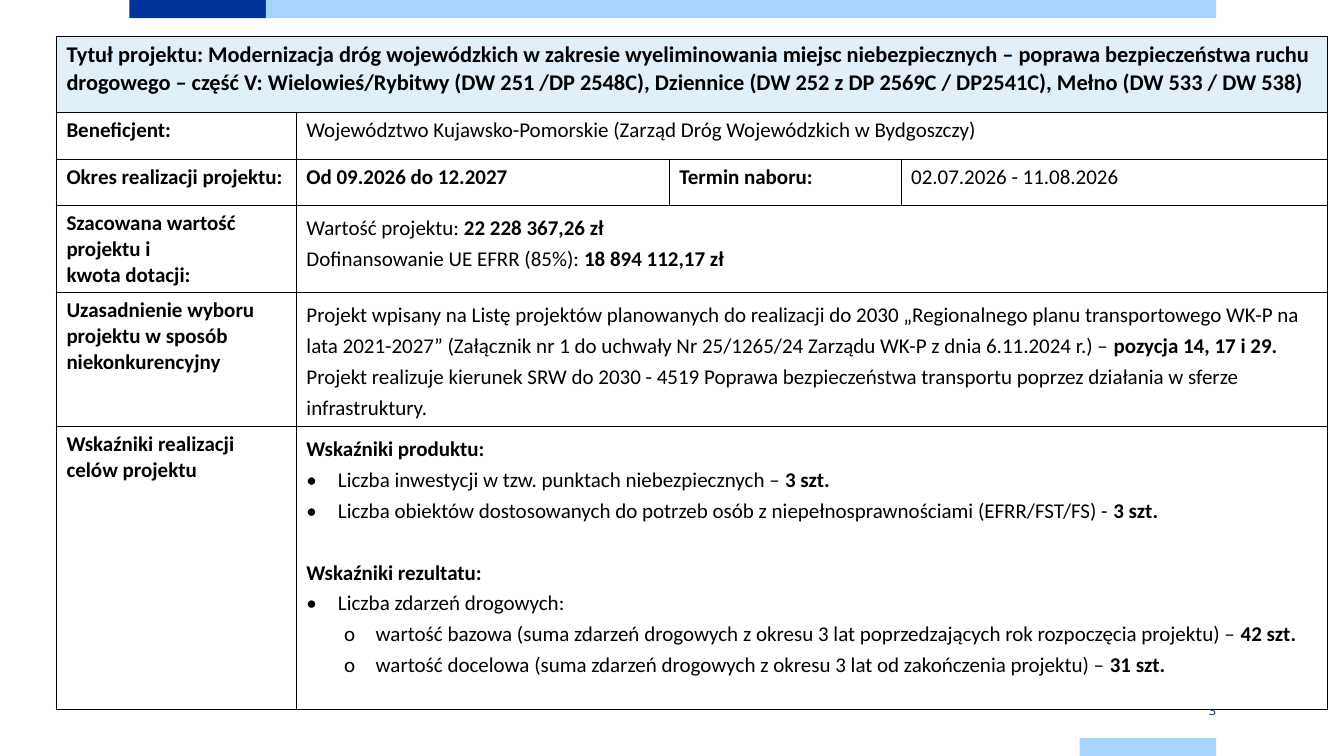
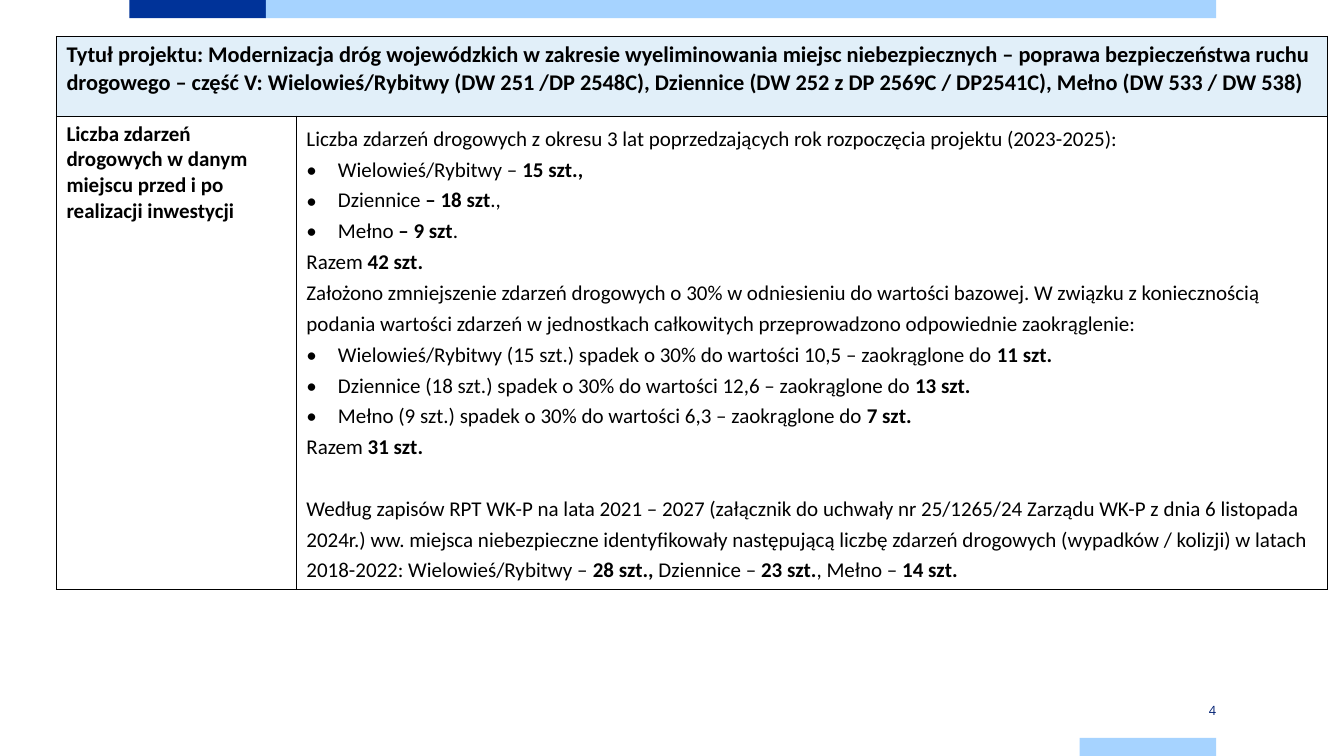
from pptx import Presentation
from pptx.dml.color import RGBColor
from pptx.enum.shapes import MSO_SHAPE
from pptx.enum.text import MSO_ANCHOR, PP_ALIGN
from pptx.oxml.ns import qn
from pptx.util import Pt
from lxml.etree import SubElement

# Shared look
NAVY, SKY, INK = "003399", "A6D3FF", "002073"
PALE, WHITE, BLACK = "E1EFF9", "FFFFFF", "000000"
FONT, SMALL = "Calibri", "Open Sans"
WIDE, HIGH = 960, 540
BAND = 13  # height of the bands
LEFT, TOP = 40.3, 26
STEP = 97.5  # width of the short bands
EDGE = 92.4  # left end of the top band
BACK = 771.2  # left end of the bottom band and number
LABEL = 171.4  # width of the label column

# Paragraph kinds: line spacing, space before, left indent, bullet
KINDS = {
    "plain": (1, 0, 0, None),
    "text": (1.2, 0, 0, None),
    "gap": (1.2, 22, 0, None),
    "dot": (1.2, 0, 22.5, "•"),
    "sub": (1.2, 0, 49.5, "o"),
}
HANG = 22.5

# Wording: ** switches bold on and off
TITLE = (
    "**Tytuł projektu: Modernizacja dróg wojewódzkich w zakresie wyeliminowania "
    "miejsc niebezpiecznych – poprawa bezpieczeństwa ruchu drogowego – część V: "
    "Wielowieś/Rybitwy (DW 251 /DP 2548C), Dziennice (DW 252 z DP 2569C / DP2541C), "
    "Mełno (DW 533 / DW 538)**"
)


def plain(*lines):
    return [("plain", line) for line in lines]


def bold(*lines):
    return plain(*(f"**{line}**" for line in lines))


FACTS = [
    [plain(TITLE)],
    [bold("Beneficjent:"),
     plain("Województwo Kujawsko-Pomorskie (Zarząd Dróg Wojewódzkich w Bydgoszczy)")],
    [bold("Okres realizacji projektu:"), bold("Od 09.2026 do 12.2027"),
     bold("Termin naboru:"), plain("02.07.2026 - 11.08.2026")],
    [bold("Szacowana wartość projektu i", "kwota dotacji:"), [
        ("text", "Wartość projektu: **22 228 367,26 zł**"),
        ("text", "Dofinansowanie UE EFRR (85%): **18 894 112,17 zł**"),
    ]],
    [bold("Uzasadnienie wyboru projektu w sposób niekonkurencyjny"), [
        ("text", "Projekt wpisany na Listę projektów planowanych do realizacji do 2030 "
         "„Regionalnego planu transportowego WK-P na lata 2021-2027” (Załącznik nr 1 do "
         "uchwały Nr 25/1265/24 Zarządu WK-P z dnia 6.11.2024 r.) – "
         "**pozycja 14, 17 i 29.**"),
        ("text", "Projekt realizuje kierunek SRW do 2030 - 4519 Poprawa bezpieczeństwa "
         "transportu poprzez działania w sferze infrastruktury."),
    ]],
    [bold("Wskaźniki realizacji celów projektu"), [
        ("text", "**Wskaźniki produktu:**"),
        ("dot", "Liczba inwestycji w tzw. punktach niebezpiecznych – **3 szt.**"),
        ("dot", "Liczba obiektów dostosowanych do potrzeb osób z niepełnosprawnościami "
         "(EFRR/FST/FS) - **3 szt.**"),
        ("gap", "**Wskaźniki rezultatu:**"),
        ("dot", "Liczba zdarzeń drogowych:"),
        ("sub", "wartość bazowa (suma zdarzeń drogowych z okresu 3 lat poprzedzających "
         "rok rozpoczęcia projektu) – **42 szt.**"),
        ("sub", "wartość docelowa (suma zdarzeń drogowych z okresu 3 lat od zakończenia "
         "projektu) – **31 szt.**"),
    ]],
]

EVENTS = [
    [plain(TITLE)],
    [bold("Liczba zdarzeń drogowych w danym miejscu przed i po realizacji inwestycji"), [
        ("text", "Liczba zdarzeń drogowych z okresu 3 lat poprzedzających rok "
         "rozpoczęcia projektu (2023-2025):"),
        ("dot", "Wielowieś/Rybitwy – **15 szt.,**"),
        ("dot", "Dziennice **– 18 szt**.,"),
        ("dot", "Mełno **– 9 szt**."),
        ("text", "Razem **42 szt.**"),
        ("text", "Założono zmniejszenie zdarzeń drogowych o 30% w odniesieniu do wartości "
         "bazowej. W związku z koniecznością podania wartości zdarzeń w jednostkach "
         "całkowitych przeprowadzono odpowiednie zaokrąglenie:"),
        ("dot", "Wielowieś/Rybitwy (15 szt.) spadek o 30% do wartości 10,5 – "
         "zaokrąglone do **11 szt.**"),
        ("dot", "Dziennice (18 szt.) spadek o 30% do wartości 12,6 – "
         "zaokrąglone do **13 szt.**"),
        ("dot", "Mełno (9 szt.) spadek o 30% do wartości 6,3 – zaokrąglone do **7 szt.**"),
        ("text", "Razem **31 szt.**"),
        ("gap", "Według zapisów RPT WK-P na lata 2021 – 2027 (załącznik do uchwały nr "
         "25/1265/24 Zarządu WK-P z dnia 6 listopada 2024r.) ww. miejsca niebezpieczne "
         "identyfikowały następującą liczbę zdarzeń drogowych (wypadków / kolizji) w "
         "latach 2018-2022: Wielowieś/Rybitwy – **28 szt., **Dziennice – **23 szt.**, "
         "Mełno – **14 szt.**"),
    ]],
]


def paint(part, color):
    """Give a fill or a font a solid colour."""
    if hasattr(part, "solid"):
        part.solid()
        part.fore_color.rgb = RGBColor.from_string(color)
    else:
        part.color.rgb = RGBColor.from_string(color)


# Bands and page number
def add_bands(slide, layout):
    """Draw the bands and hand them to the layout, which all slides share."""
    for mark in list(layout.placeholders):
        mark.element.getparent().remove(mark.element)
    right = BACK + STEP
    start = EDGE + STEP
    for left, top, width, color in (
        (EDGE, 0, STEP, NAVY),
        (start, 0, right - start, SKY),
        (BACK, HIGH - BAND, STEP, SKY),
    ):
        band = slide.shapes.add_shape(
            MSO_SHAPE.RECTANGLE, Pt(left), Pt(top), Pt(width), Pt(BAND))
        band.shadow.inherit = False
        paint(band.fill, color)
        band.line.fill.background()
        layout.shapes.element.append(band.element)


def add_number(slide, number):
    box = slide.shapes.add_textbox(Pt(BACK), Pt(501.2), Pt(STEP), Pt(BAND))
    frame = box.text_frame
    frame.word_wrap = True
    frame.vertical_anchor = MSO_ANCHOR.MIDDLE
    frame.margin_left = frame.margin_right = 0
    frame.margin_top = frame.margin_bottom = 0
    frame.text = str(number)
    line = frame.paragraphs[0]
    line.alignment = PP_ALIGN.RIGHT
    font = line.runs[0].font
    font.name, font.size = SMALL, Pt(9.1)
    paint(font, INK)


# Table parts
def add_edges(cell):
    props = cell._tc.get_or_add_tcPr()
    for spot, side in enumerate(("a:lnL", "a:lnR", "a:lnT", "a:lnB")):
        line = props.makeelement(qn(side), {"w": str(Pt(0.75))})
        solid = SubElement(line, qn("a:solidFill"))
        SubElement(solid, qn("a:srgbClr"), val=BLACK)
        props.insert(spot, line)


def write(line, kind, text, size):
    """Fill one paragraph, with its bullet and its bold parts."""
    space, before, indent, mark = KINDS[kind]
    if mark:
        props = line._p.get_or_add_pPr()
        props.set("marL", str(Pt(indent)))
        props.set("indent", str(-Pt(HANG)))
        SubElement(props, qn("a:buFont"), typeface=FONT)
        SubElement(props, qn("a:buChar"), char=mark)
    line.line_spacing = space
    if before:
        line.space_before = Pt(before)
    for spot, part in enumerate(text.split("**")):
        if part:
            run = line.add_run()
            run.text = part
            font = run.font
            font.name, font.size, font.bold = FONT, Pt(size), spot % 2 == 1
            paint(font, BLACK)


def fill_cell(cell, lines, size):
    frame = cell.text_frame
    for spot, (kind, text) in enumerate(lines):
        line = frame.add_paragraph() if spot else frame.paragraphs[0]
        write(line, kind, text, size)


def add_grid(slide, rows, widths, heights):
    """Build the table; the last cell of a short row spans what is left."""
    table = slide.shapes.add_table(
        len(rows), len(widths), Pt(LEFT), Pt(TOP),
        Pt(sum(widths)), Pt(sum(heights))).table
    table.first_row = table.horz_banding = False
    for col, width in zip(table.columns, widths):
        col.width = Pt(width)
    last = len(widths) - 1
    for index, (row, height) in enumerate(zip(rows, heights)):
        table.rows[index].height = Pt(height)
        for cell in table.rows[index].cells:
            paint(cell.fill, WHITE if index else PALE)
            add_edges(cell)
        end = len(row) - 1
        if end < last:
            table.cell(index, end).merge(table.cell(index, last))
        for spot, lines in enumerate(row):
            fill_cell(table.cell(index, spot), lines, 15 if index else 16)


def main():
    deck = Presentation()
    deck.slide_width, deck.slide_height = Pt(WIDE), Pt(HIGH)
    layout = deck.slide_layouts[6]
    pages = (
        (FACTS, (LABEL, 266.4, 165.6, 304.6), (54, 33.8, 33.2, 62, 95.8, 202)),
        (EVENTS, (LABEL, 736.6), (57, 338)),
    )
    for number, (rows, widths, heights) in enumerate(pages, 3):
        slide = deck.slides.add_slide(layout)
        if number == 3:
            add_bands(slide, layout)
        add_number(slide, number)
        add_grid(slide, rows, widths, heights)
    deck.save("out.pptx")


if __name__ == "__main__":
    main()
